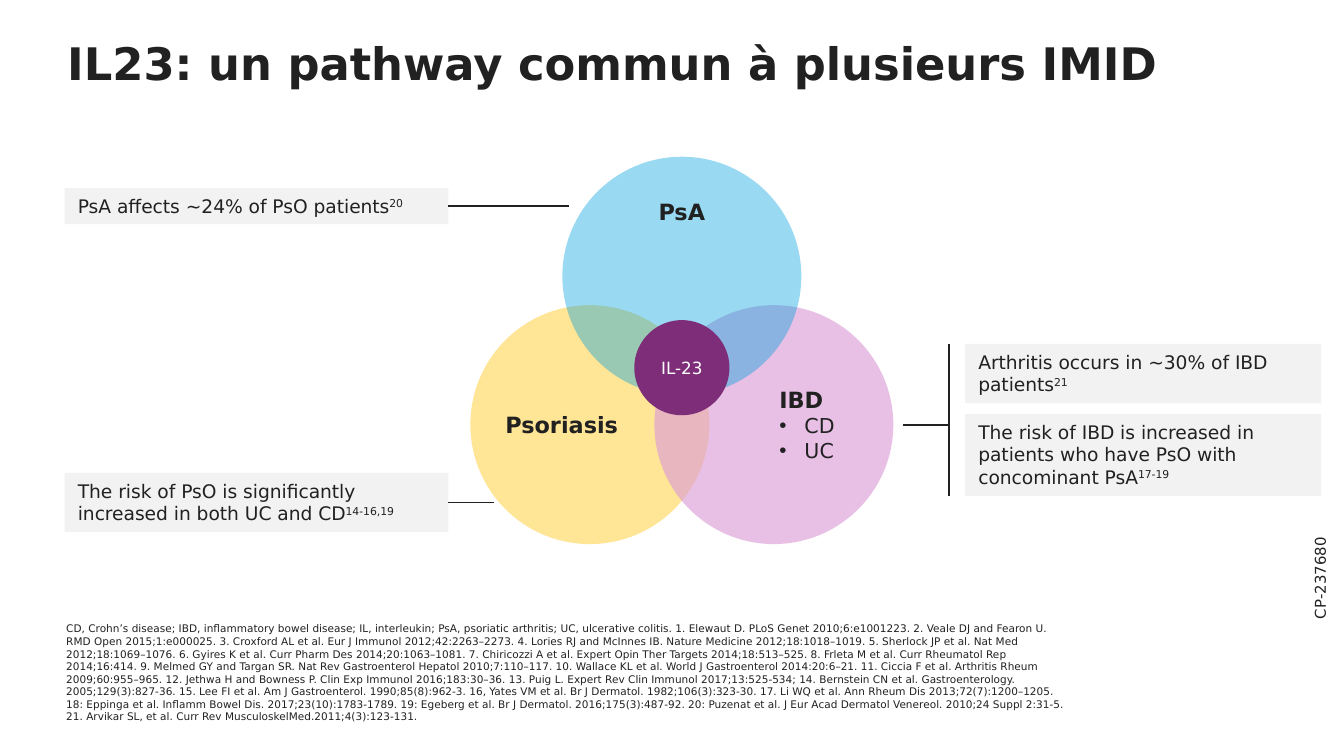
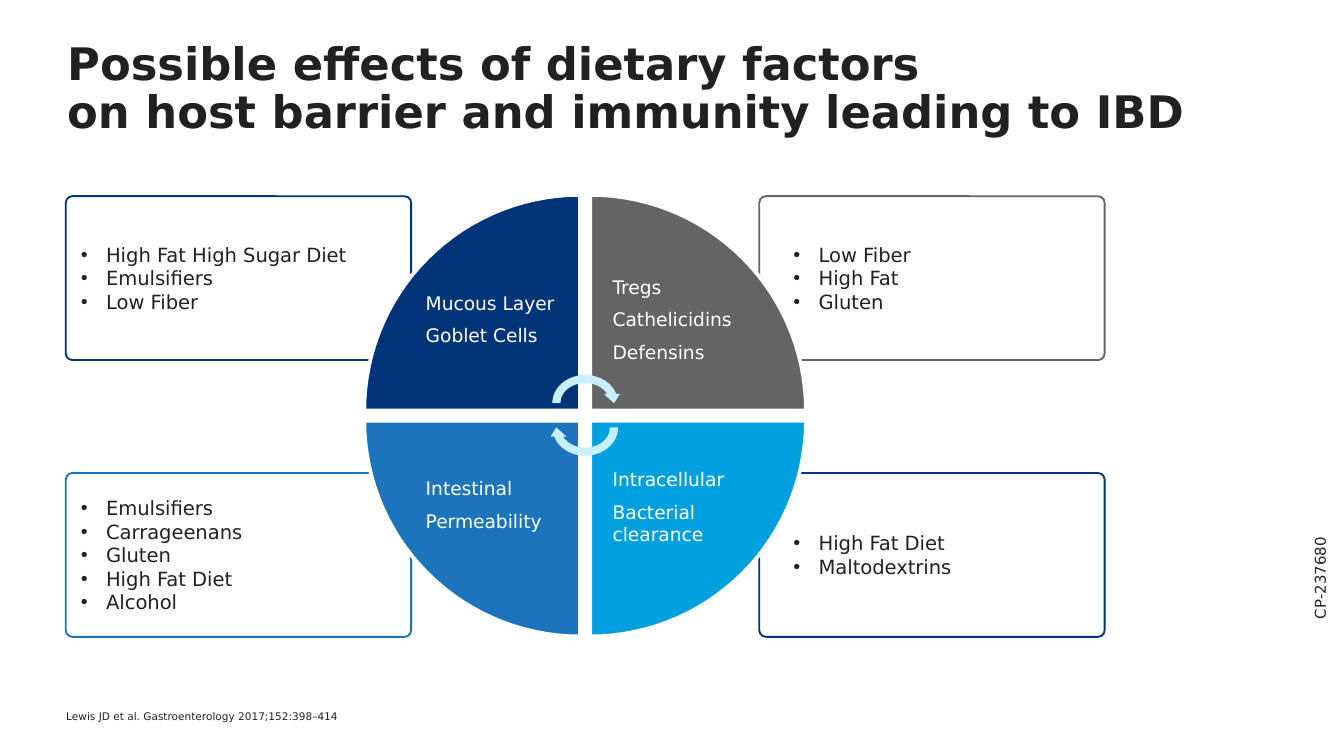
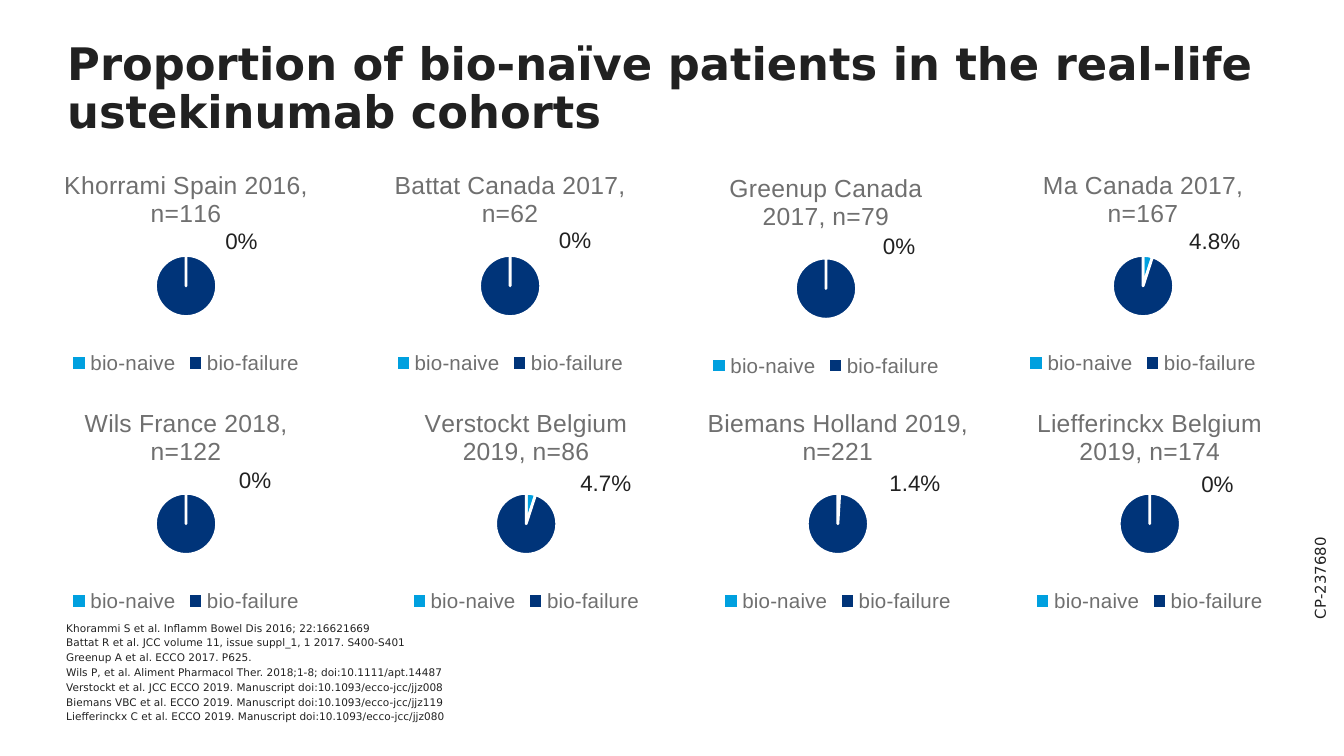
from math import cos, pi, sin

from lxml.etree import SubElement
from pptx import Presentation
from pptx.chart.data import CategoryChartData
from pptx.dml.color import RGBColor
from pptx.enum.chart import XL_CHART_TYPE, XL_LEGEND_POSITION
from pptx.enum.shapes import MSO_CONNECTOR, MSO_SHAPE
from pptx.enum.text import MSO_ANCHOR, PP_ALIGN
from pptx.oxml import parse_xml
from pptx.oxml.ns import nsdecls, qn
from pptx.util import Pt

COLORS = {
    "ink": "212121", "white": "FFFFFF", "note": "F2F2F2", "chart text": "6F6F6F",
    "navy": "003479", "gray": "646464", "blue": "1C75BC", "sky": "00A0DF",
    "ice": "C6EFFF", "yellow": "FFC000", "pink": "DB9CD6", "purple": "7E2E78",
}
BODY_FONT = "DejaVu Sans"
CHART_FONT = "Arial"
INSETS = (7.2, 3.6, 7.2, 3.6)
NO_INSETS = (0, 0, 0, 0)
HANGING = Pt(13.5)

IMID_SOURCES = [
    "CD, Crohn’s disease; IBD, inflammatory bowel disease; IL, interleukin; PsA, psoriatic arthritis;",
    "UC, ulcerative colitis.",
    "1. Elewaut D. PLoS Genet 2010;6:e1001223.",
    "2. Veale DJ and Fearon U. RMD Open 2015;1:e000025.",
    "3. Croxford AL et al. Eur J Immunol 2012;42:2263–2273.",
    "4. Lories RJ and McInnes IB. Nature Medicine 2012;18:1018–1019.",
    "5. Sherlock JP et al. Nat Med 2012;18:1069–1076.",
    "6. Gyires K et al. Curr Pharm Des 2014;20:1063–1081.",
    "7. Chiricozzi A et al. Expert Opin Ther Targets 2014;18:513–525.",
    "8. Frleta M et al. Curr Rheumatol Rep 2014;16:414.",
    "9. Melmed GY and Targan SR. Nat Rev Gastroenterol Hepatol 2010;7:110–117.",
    "10. Wallace KL et al. World J Gastroenterol 2014:20:6–21.",
    "11. Ciccia F et al. Arthritis Rheum 2009;60:955–965.",
    "12. Jethwa H and Bowness P. Clin Exp Immunol 2016;183:30–36.",
    "13. Puig L. Expert Rev Clin Immunol 2017;13:525-534;",
    "14. Bernstein CN et al. Gastroenterology. 2005;129(3):827-36.",
    "15. Lee FI et al. Am J Gastroenterol. 1990;85(8):962-3.",
    "16, Yates VM et al. Br J Dermatol. 1982;106(3):323-30.",
    "17. Li WQ et al. Ann Rheum Dis 2013;72(7):1200–1205.",
    "18: Eppinga et al. Inflamm Bowel Dis. 2017;23(10):1783-1789.",
    "19: Egeberg et al. Br J Dermatol. 2016;175(3):487-92.",
    "20: Puzenat et al. J Eur Acad Dermatol Venereol. 2010;24 Suppl 2:31-5.",
    "21. Arvikar SL, et al. Curr Rev MusculoskelMed.2011;4(3):123-131.",
]
COHORT_SOURCES = [
    "Khorammi S et al. Inflamm Bowel Dis 2016; 22:16621669",
    "Battat R et al. JCC volume 11, issue suppl_1, 1 2017. S400-S401",
    "Greenup A et al. ECCO 2017. P625.",
    "Wils P, et al. Aliment Pharmacol Ther. 2018;1-8; doi:10.1111/apt.14487",
    "Verstockt et al. JCC ECCO 2019. Manuscript doi:10.1093/ecco-jcc/jjz008",
    "Biemans VBC et al. ECCO 2019. Manuscript doi:10.1093/ecco-jcc/jjz119",
    "Liefferinckx C et al. ECCO 2019. Manuscript doi:10.1093/ecco-jcc/jjz080",
]
COHORTS = [
    ("Khorrami Spain 2016, n=116", 0, "0%", (8.6, 82.1), (105, 36)),
    ("Battat Canada 2017, n=62", 0, "0%", (182.2, 82.1), (110.2, 35.3)),
    ("Greenup Canada 2017, n=79", 0, "0%", (351.4, 83.5), (114.5, 37.4)),
    ("Ma Canada 2017, n=167", 5, "4.8%", (521.3, 82.1), (108.7, 36)),
    ("Wils France 2018, n=122", 0, "0%", (8.6, 209.5), (112.3, 36.7)),
    ("Verstockt Belgium 2019, n=86", 5, "4.7%", (190.8, 209.5), (113, 38.2)),
    ("Biemans Holland 2019, n=221", 1, "1.4%", (357.8, 209.5), (111.6, 38.2)),
    ("Liefferinckx Belgium 2019, n=174", 0, "0%", (524.9, 209.5), (111.6, 38.9)),
]


def color(name):
    """Return the named colour."""
    return RGBColor.from_string(COLORS[name])


def points(box):
    """Turn a box given in points into lengths."""
    return [Pt(value) for value in box]


def style_font(font, size, ink="ink", bold=False, name=BODY_FONT):
    """Set face, size, weight and colour of a font."""
    font.name, font.size, font.bold = name, Pt(size), bold
    font.color.rgb = color(ink)


def add_bullet(para):
    """Give a paragraph a hanging round bullet."""
    properties = para._p.get_or_add_pPr()
    properties.set("marL", str(HANGING))
    properties.set("indent", str(-HANGING))
    SubElement(properties, qn("a:buFont"), typeface="Arial")
    SubElement(properties, qn("a:buChar"), char="•")


def add_span(para, text, size, raised=False, **font):
    """Add one run of text to a paragraph."""
    span = para.add_run()
    span.text = text
    style_font(span.font, size, **font)
    if raised:
        span._r.get_or_add_rPr().set("baseline", "30000")


def write(shape, lines, size, bullets=False, gap=0, align=PP_ALIGN.LEFT, **font):
    """Write lines as paragraphs, adding to any text already there."""
    frame = shape.text_frame
    for line in lines:
        para = frame.add_paragraph() if frame.paragraphs[0].runs else frame.paragraphs[0]
        if bullets:
            add_bullet(para)
        para.alignment = align
        if gap and para._p is not frame.paragraphs[0]._p:
            para.space_before = Pt(gap)
        add_span(para, line, size, **font)


def set_frame(shape, anchor=MSO_ANCHOR.TOP, insets=INSETS, wrap=True):
    """Set anchor, insets and wrapping of a shape's text."""
    frame = shape.text_frame
    frame.word_wrap, frame.vertical_anchor = wrap, anchor
    frame.margin_left, frame.margin_top, frame.margin_right, frame.margin_bottom = points(insets)


def add_text(page, box, **frame):
    """Add an empty text box."""
    shape = page.shapes.add_textbox(*points(box))
    set_frame(shape, **frame)
    return shape


def paint(shape, fill, alpha=None, line=None, width=1):
    """Set fill, transparency and outline of a shape without shadow."""
    shape.shadow.inherit = False
    shape.fill.solid()
    shape.fill.fore_color.rgb = color(fill)
    if alpha:
        tone = shape._element.spPr.find(qn("a:solidFill")).find(qn("a:srgbClr"))
        SubElement(tone, qn("a:alpha"), val=str(alpha * 1000))
    if line:
        shape.line.color.rgb = color(line)
        shape.line.width = Pt(width)
    else:
        shape.line.fill.background()


def add_panel(page, kind, box, fill, alpha=None, line=None, **frame):
    """Add a painted preset shape."""
    shape = page.shapes.add_shape(kind, *points(box))
    paint(shape, fill, alpha, line)
    set_frame(shape, **frame)
    return shape


def add_line(page, start, end, source=None):
    """Draw a thin straight line, joined to the right side of a source if given."""
    line = page.shapes.add_connector(MSO_CONNECTOR.STRAIGHT, *points(start + end))
    line.line.color.rgb = color("ink")
    line.line.width = Pt(1)
    SubElement(line._element.spPr, qn("a:effectLst"))
    if source is not None:
        line.begin_connect(source, 3)


def add_page(deck, title_lines, sources, source_width=495.4):
    """Add a slide with its title, sources and approval code."""
    page = deck.slides.add_slide(deck.slide_layouts[6])
    title = add_text(page, (36, 22.3, 648.7, 26.2 * len(title_lines)), insets=NO_INSETS)
    para = title.text_frame.paragraphs[0]
    para.line_spacing = 0.9
    for number, line in enumerate(title_lines):
        if number:
            para.add_line_break()
        add_span(para, line, 24, bold=True)
    footer = add_text(page, (35.5, 370.8, source_width, 16.6),
                      anchor=MSO_ANCHOR.BOTTOM, insets=NO_INSETS)
    write(footer, sources, 5.6, gap=1.2)
    code = add_text(page, (658.1, 280.8, 98.6, 17.3))
    code.rotation = 270
    write(code, ["CP-237680"], 8)
    return page


def add_venn(page, box):
    """Draw three overlapping diseases around their shared cytokine."""
    left, top, width, height = box
    disc, hub = 128, 51
    right, low = left + width - disc, top + height - disc
    middle = left + (width - disc) / 2
    psoriasis = add_panel(page, MSO_SHAPE.OVAL, (left, low, disc, disc), "yellow", 41,
                          anchor=MSO_ANCHOR.MIDDLE, insets=(0, 3.6, 7.2, 3.6))
    write(psoriasis, ["Psoriasis"], 12, bold=True)
    bowel = add_panel(page, MSO_SHAPE.OVAL, (right, low, disc, disc), "pink", 63,
                      anchor=MSO_ANCHOR.MIDDLE, insets=(48.2, 3.6, 0, 3.6))
    write(bowel, ["IBD"], 12, bold=True)
    write(bowel, ["CD", "UC"], 11, bullets=True)
    arthritis = add_panel(page, MSO_SHAPE.OVAL, (middle, top, disc, disc), "sky", 40)
    write(arthritis, ["PsA"], 12, bold=True, align=PP_ALIGN.CENTER)
    center = add_panel(page, MSO_SHAPE.OVAL, (left + (width - hub) / 2, top + 87.5, hub, hub),
                       "purple", anchor=MSO_ANCHOR.MIDDLE, insets=(0, 3.6, 0, 3.6))
    write(center, ["IL-23"], 9, ink="white", align=PP_ALIGN.CENTER)


def add_note(page, box, text, citation):
    """Add a grey finding with its raised citation."""
    note = add_panel(page, MSO_SHAPE.RECTANGLE, box, "note")
    para = note.text_frame.paragraphs[0]
    para.alignment = PP_ALIGN.LEFT
    add_span(para, text, 10)
    add_span(para, citation, 10, raised=True)
    return note


def add_left_notes(page, box):
    """Add the two findings on the left with their lines to the circles."""
    left, top, width, height = box
    side = left + width
    notes = [
        (top, 19.4, 64.5, "PsA affects ∼24% of PsO patients", "20"),
        (top + height - 31.7, 31.7, 24.4,
         "The risk of PsO is significantly increased in both UC and CD", "14-16,19"),
    ]
    for note_top, note_height, reach, text, citation in notes:
        note = add_note(page, (left, note_top, width, note_height), text, citation)
        middle = note_top + note_height / 2
        add_line(page, (side, middle), (side + reach, middle), note)


def add_right_notes(page, box):
    """Add the two findings on the right and the bracket that holds them."""
    left, top, width, height = box
    add_note(page, (left, top, width, 31.7), "Arthritis occurs in ∼30% of IBD patients", "21")
    add_note(page, (left, top + height - 43.9, width, 43.9),
             "The risk of IBD is increased in patients who have PsO with concominant PsA", "17-19")
    bracket, stub = left - 8.7, top + 43.2
    add_line(page, (bracket, top), (bracket, top + height))
    add_line(page, (bracket - 24.5, stub), (bracket, stub))


def add_diet_cards(page, box):
    """Place the four lists of dietary factors in the corners of the box."""
    left, top, width, height = box
    card_width, card_height = 185, 87.8
    cards = [
        (1, 1, "navy", ["High Fat Diet", "Maltodextrins"]),
        (1, 0, "gray", ["Low Fiber", "High Fat", "Gluten"]),
        (0, 1, "blue", ["Emulsifiers", "Carrageenans", "Gluten", "High Fat Diet", "Alcohol"]),
        (0, 0, "navy", ["High Fat High Sugar Diet", "Emulsifiers", "Low Fiber"]),
    ]
    for column, row, line, factors in cards:
        place = (left + column * (width - card_width), top + row * (height - card_height),
                 card_width, card_height)
        card = add_panel(page, MSO_SHAPE.ROUNDED_RECTANGLE, place, "white", line=line,
                         anchor=MSO_ANCHOR.MIDDLE, insets=(17.3 if column else 7.2, 3.6, 7.2, 3.6))
        card.adjustments[0] = 0.04
        write(card, factors, 10.5, bullets=True)


def add_quadrant(page, corner, radius, start, fill):
    """Draw a quarter disc from its corner, starting at an angle in quarter turns."""
    steps = 30
    arc = [(Pt(corner[0] + radius * cos(angle)), Pt(corner[1] + radius * sin(angle)))
           for angle in ((start + step / steps) * pi / 2 for step in range(steps + 1))]
    builder = page.shapes.build_freeform(Pt(corner[0]), Pt(corner[1]))
    builder.add_line_segments(arc, close=True)
    paint(builder.convert_to_shape(), fill, line="white", width=2)


def add_barrier_wheel(page, box):
    """Draw the four barrier mechanisms as a divided disc with turning arrows."""
    left, top, size, _ = box
    radius, gap = 115.6, 5.4
    quadrants = [(0, 0, 2, "navy"), (1, 0, 3, "gray"), (1, 1, 0, "sky"), (0, 1, 1, "blue")]
    for column, row, start, fill in quadrants:
        corner = (left + radius + column * gap, top + radius + row * gap)
        add_quadrant(page, corner, radius, start, fill)
    for arrow_top, turn in ((94.3, 0), (107.3, 180)):
        arrow = add_panel(page, MSO_SHAPE.CIRCULAR_ARROW,
                          (left + size / 2 - 19.8, top + arrow_top, 39.6, 34.6), "ice")
        arrow.rotation = turn
    labels = [
        (25.8, 48.2, 37.4, ["Mucous Layer", "Goblet Cells"]),
        (25.8, 147.6, 37.4, ["Intestinal", "Permeability"]),
        (125.9, 39.6, 55.4, ["Tregs", "Cathelicidins", "Defensins"]),
        (125.9, 142.6, 49.7, ["Intracellular", "Bacterial clearance"]),
    ]
    for label_left, label_top, height, lines in labels:
        label = add_text(page, (left + label_left, top + label_top, 90, height))
        write(label, lines, 10, gap=5.5, ink="white")


def place_plot(chart, x, y, width, height):
    """Fix the plot area of a chart, in fractions of the chart."""
    area = chart._chartSpace.chart.plotArea
    for layout in area.findall(qn("c:layout")):
        area.remove(layout)
    area.insert(0, parse_xml(
        f'<c:layout {nsdecls("c")}><c:manualLayout><c:layoutTarget val="inner"/>'
        f'<c:xMode val="edge"/><c:yMode val="edge"/><c:x val="{x}"/><c:y val="{y}"/>'
        f'<c:w val="{width}"/><c:h val="{height}"/></c:manualLayout></c:layout>'))


def add_cohort(page, box, title, naive, share, offset):
    """Add the pie of one cohort and its share of bio-naive patients."""
    data = CategoryChartData()
    data.categories = ["bio-naive", "bio-failure"]
    data.add_series("Series 1", (naive, 100 - naive))
    chart = page.shapes.add_chart(XL_CHART_TYPE.PIE, *points(box), data).chart
    style_font(chart.font, 11, name=CHART_FONT)
    chart.has_title = True
    add_span(chart.chart_title.text_frame.paragraphs[0], title, 13.2,
             ink="chart text", name=CHART_FONT)
    chart.chart_title.include_in_layout = False
    chart.has_legend = True
    chart.legend.position = XL_LEGEND_POSITION.BOTTOM
    chart.legend.include_in_layout = False
    style_font(chart.legend.font, 11, ink="chart text", name=CHART_FONT)
    plot = chart.plots[0]
    plot.vary_by_categories = True
    for number, fill in enumerate(("sky", "navy")):
        slice_format = plot.series[0].points[number].format
        slice_format.fill.solid()
        slice_format.fill.fore_color.rgb = color(fill)
        slice_format.line.color.rgb = color("white")
        slice_format.line.width = Pt(1.5)
    place_plot(chart, 0.41, 0.45, 0.18, 0.27)
    label = add_text(page, (box[0] + offset[0], box[1] + offset[1],
                            31.7 if len(share) == 2 else 41.8, 21.6), wrap=False)
    write(label, [share], 12, name=CHART_FONT)


def build_pathway(deck):
    """Build the slide on the shared pathway."""
    page = add_page(deck, ["IL23: un pathway commun à plusieurs IMID"],
                    [" ".join(IMID_SOURCES)], 537.8)
    add_venn(page, (252, 84, 226.6, 207.5))
    add_right_notes(page, (517, 184.3, 190.8, 81.4))
    add_left_notes(page, (34.6, 100.8, 205.6, 184.3))


def build_diet(deck):
    """Build the slide on dietary factors."""
    page = add_page(deck, ["Possible effects of dietary factors",
                           "on host barrier and immunity leading to IBD"],
                    ["Lewis JD et al. Gastroenterology 2017;152:398–414"])
    add_diet_cards(page, (35.3, 105.1, 556.5, 236.1))
    add_barrier_wheel(page, (195.2, 104.4, 236.6, 236.6))


def build_cohorts(deck):
    """Build the slide of cohort pies."""
    page = add_page(deck, ["Proportion of bio-naïve patients in the real-life ustekinumab cohorts"],
                    COHORT_SOURCES)
    for title, naive, share, corner, offset in COHORTS:
        add_cohort(page, corner + (182.2, 121.7), title, naive, share, offset)


def main():
    """Build and save the deck."""
    deck = Presentation()
    deck.slide_width, deck.slide_height = Pt(720), Pt(405)
    build_pathway(deck)
    build_diet(deck)
    build_cohorts(deck)
    deck.save("out.pptx")


if __name__ == "__main__":
    main()
